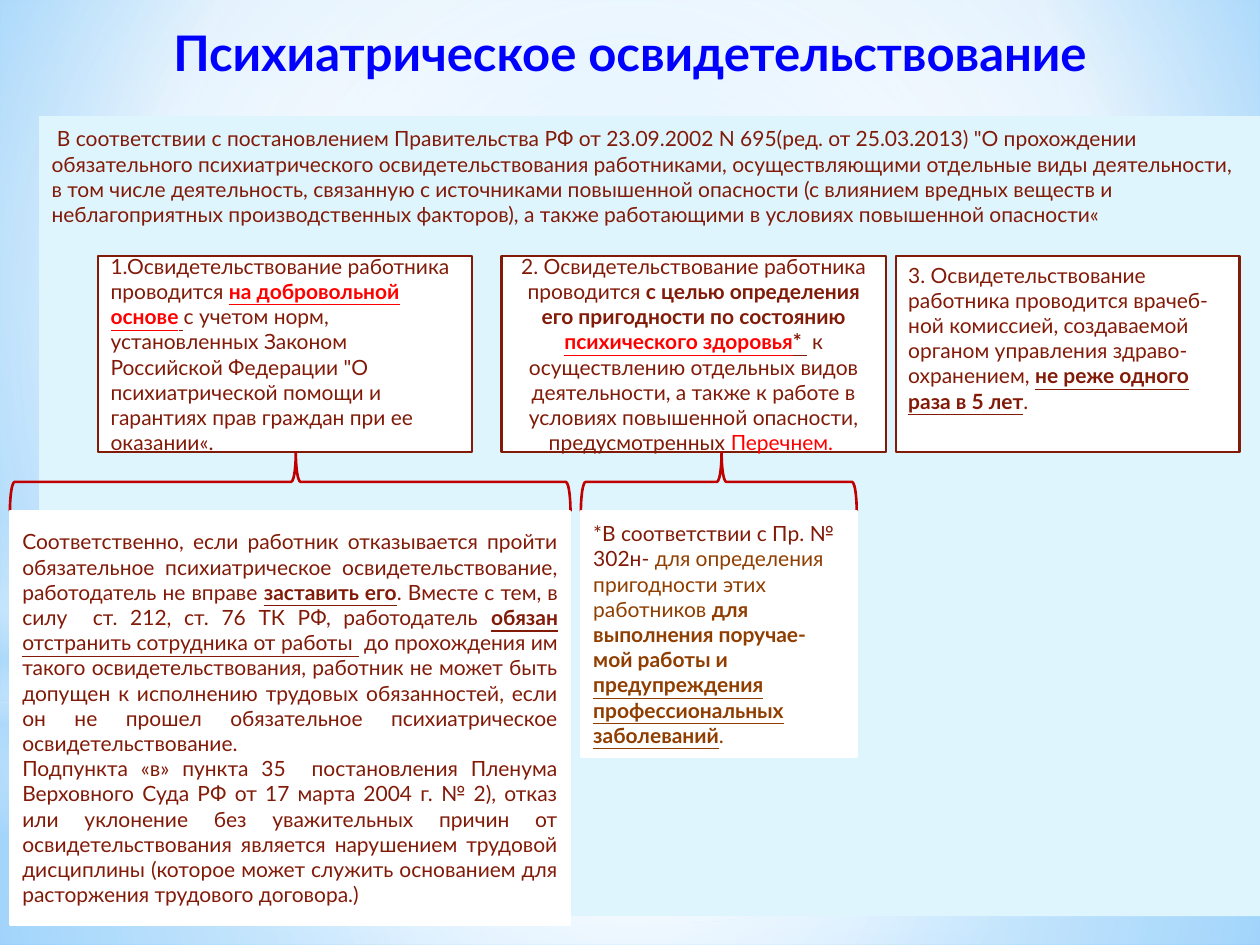
from dataclasses import dataclass

from lxml.etree import SubElement as Sub
from pptx import Presentation
from pptx.dml.color import RGBColor as Rgb
from pptx.enum.shapes import MSO_SHAPE as Kind
from pptx.enum.text import MSO_ANCHOR as Anchor, PP_ALIGN as Align
from pptx.oxml.ns import qn
from pptx.util import Cm, Pt


@dataclass(frozen=True)
class Theme:
    font: str = "Lato"
    head: int = 28
    body: int = 12
    edge: float = 1.25
    curve: float = 1.5
    blue: str = "0000FF"
    dark: str = "821A08"
    brown: str = "903E00"
    red: str = "FF0000"
    brace: str = "C00000"
    white: str = "FFFFFF"
    panel: str = "DFF5FD"
    haze: str = "B4DCFA"
    sky: str = "9ED5FF"
    deep: str = "5BB9FF"


class Page:
    def __init__(self, deck, theme):
        self.theme = theme
        self.slide = deck.slides.add_slide(deck.slide_layouts[6])

    def grade(self, fill, root, stops, focus=None):
        """Stops are (position, colour, opacity); focus is l, t, r, b in percent."""
        fill.gradient()
        grad = next(root.iter(qn("a:gradFill")))
        for part in list(grad):
            grad.remove(part)
        row = Sub(grad, qn("a:gsLst"))
        for pos, color, alpha in stops:
            stop = Sub(row, qn("a:gs"), pos=str(pos * 1000))
            tone = Sub(stop, qn("a:srgbClr"), val=color)
            if alpha < 100:
                Sub(tone, qn("a:alpha"), val=str(alpha * 1000))
        if focus:
            way = Sub(grad, qn("a:path"))
            way.set("path", "circle")
            sides = {k: str(v * 1000) for k, v in zip("ltrb", focus)}
            Sub(way, qn("a:fillToRect"), **sides)
        else:
            Sub(grad, qn("a:lin"), ang="5400000", scaled="0")

    def back(self, stops, focus):
        self.grade(self.slide.background.fill, self.slide.element, stops, focus)

    def shape(self, kind, box):
        item = self.slide.shapes.add_shape(kind, *map(Cm, box))
        item.shadow.inherit = False
        return item

    def glow(self, box, stops, focus=None, kind=Kind.RECTANGLE):
        item = self.shape(kind, box)
        item.line.fill.background()
        self.grade(item.fill, item.element, stops, focus)

    def label(self, frame, paras, align, anchor, size=None):
        """Each run is (text, marks, colour); marks hold b for bold, u for underline."""
        frame.word_wrap = True
        frame.vertical_anchor = anchor
        for i, runs in enumerate(paras):
            para = frame.add_paragraph() if i else frame.paragraphs[0]
            para.alignment = align
            para.font.name = self.theme.font
            para.font.size = Pt(size or self.theme.body)
            for text, marks, color in runs:
                run = para.add_run()
                run.text = text
                run.font.bold = "b" in marks
                run.font.underline = "u" in marks
                run.font.color.rgb = Rgb.from_string(color)
        return frame

    def title(self, box, text):
        frame = self.slide.shapes.add_textbox(*map(Cm, box)).text_frame
        self.label(frame, [[(text, "b", self.theme.blue)]],
                   Align.CENTER, Anchor.TOP, self.theme.head)

    def panel(self, box, paras, fill, edge=None, align=Align.LEFT,
              anchor=Anchor.MIDDLE):
        item = self.shape(Kind.RECTANGLE, box)
        item.fill.solid()
        item.fill.fore_color.rgb = Rgb.from_string(fill)
        if edge:
            item.line.color.rgb = Rgb.from_string(edge)
            item.line.width = Pt(self.theme.edge)
        else:
            item.line.fill.background()
        return self.label(item.text_frame, paras, align, anchor)

    def brace(self, x, y, wide, high):
        """A left brace turned to point up, filling the given area."""
        shift = (wide - high) / 2
        item = self.shape(Kind.LEFT_BRACE, (x + shift, y - shift, high, wide))
        item.rotation = 90
        item.adjustments[0] = 0.08
        item.adjustments[1] = 0.49
        item.fill.background()
        item.line.color.rgb = Rgb.from_string(self.theme.brace)
        item.line.width = Pt(self.theme.curve)


def main():
    deck = Presentation()
    deck.slide_width, deck.slide_height = Cm(25.4), Cm(19.05)
    t = Theme()
    page = Page(deck, t)
    mid = (50, 50, 50, 50)

    # Backdrop
    page.back([(0, t.sky, 100), (60, t.white, 100), (100, t.deep, 100)],
              (20, 10, 20, 60))
    page.glow((0, 14.17, 25.4, 4.88),
              [(0, t.white, 91), (37, t.white, 76), (100, t.haze, 79)], mid)
    page.glow((0, 0, 25.4, 14.17),
              [(0, t.white, 89), (48, t.white, 62), (100, t.haze, 79)], mid)
    page.glow((0, 10.46, 25.4, 6.35),
              [(0, t.white, 0), (29, t.white, 30), (45, t.haze, 40),
               (55, t.white, 26), (65, t.haze, 60), (100, t.white, 0)])
    page.glow((0, 4.45, 25.4, 14.17),
              [(0, t.white, 100), (56, t.white, 0)], mid, Kind.OVAL)

    # Title and introduction
    page.title((1.27, 0.33, 22.86, 2.21), "Психиатрическое освидетельствование")
    intro = page.panel((0.79, 2.34, 24.61, 16.13), [[(
        " В соответствии с постановлением Правительства РФ от 23.09.2002 N 695"
        "(ред. от 25.03.2013) \"О прохождении обязательного психиатрического "
        "освидетельствования работниками, осуществляющими отдельные виды "
        "деятельности, в том числе деятельность, связанную с источниками "
        "повышенной опасности (с влиянием вредных веществ и неблагоприятных "
        "производственных факторов), а также работающими в условиях повышенной "
        "опасности«", "", t.dark)]], t.panel, anchor=Anchor.TOP)
    intro.margin_top = Cm(0.2)

    # Three rules
    top, high = 5.16, 3.96
    free = [
        ("1.Освидетельствование работника проводится ", "", t.dark),
        ("на добровольной основе", "bu", t.red),
        (" ", "bu", t.dark),
        ("с учетом норм, установленных Законом Российской Федерации \"О "
         "психиатрической помощи и гарантиях прав граждан при ее оказании«.",
         "", t.dark)]
    fit = [
        ("2. Освидетельствование работника проводится ", "", t.dark),
        ("с целью определения его пригодности по состоянию ", "b", t.dark),
        ("психического здоровья", "bu", t.red),
        ("* ", "bu", t.dark),
        (" ", "b", t.dark),
        ("к осуществлению отдельных видов деятельности, а также к работе в "
         "условиях повышенной опасности, предусмотренных ", "", t.dark),
        ("Перечнем. ", "", t.red)]
    term = [
        ("3. Освидетельствование работника проводится врачеб-ной комиссией, "
         "создаваемой органом управления здраво-охранением, ", "", t.dark),
        ("не реже одного раза в 5 лет", "bu", t.dark),
        (".", "", t.dark)]
    for x, wide, runs, align, anchor in (
            (1.98, 7.54, free, Align.LEFT, Anchor.MIDDLE),
            (10.11, 7.75, fit, Align.CENTER, Anchor.MIDDLE),
            (18.06, 6.93, term, Align.LEFT, Anchor.TOP)):
        page.panel((x, top, wide, high), [runs], t.white, t.dark, align, anchor)

    # Notes under braces
    refuse = [[
        ("Соответственно, если работник отказывается пройти обязательное "
         "психиатрическое освидетельствование, работодатель не вправе ",
         "", t.dark),
        ("заставить его", "bu", t.dark),
        (". Вместе с тем, в силу  ст. 212, ст. 76 ТК РФ, работодатель ",
         "", t.dark),
        ("обязан", "bu", t.dark),
        (" ", "", t.dark),
        ("отстранить сотрудника от работы ", "u", t.dark),
        (" до прохождения им такого освидетельствования, работник не может "
         "быть допущен к исполнению трудовых обязанностей, если он не прошел "
         "обязательное психиатрическое освидетельствование.", "", t.dark)], [
        ("Подпункта «в» пункта 35  постановления Пленума Верховного Суда РФ "
         "от 17 марта 2004 г. № 2), отказ или уклонение без уважительных причин "
         "от освидетельствования является нарушением трудовой дисциплины "
         "(которое может служить основанием для расторжения трудового "
         "договора.)", "", t.dark)]]
    aim = [[
        ("*В соответствии с Пр. № 302н- ", "", t.dark),
        ("для определения пригодности этих работников ", "", t.brown),
        ("для выполнения поручае-мой работы и ", "b", t.brown),
        ("предупреждения профессиональных заболеваний", "bu", t.brown),
        (".", "", t.brown)]]
    base, gap = top + high, 1.19
    for x, wide, tall, paras, align in (
            (0.2, 11.3, 8.33, refuse, Align.JUSTIFY),
            (11.71, 5.56, 4.95, aim, Align.LEFT)):
        page.brace(x, base, wide, gap)
        page.panel((x, base + gap, wide, tall), paras, t.white, t.white, align)

    deck.save("out.pptx")


if __name__ == "__main__":
    main()
